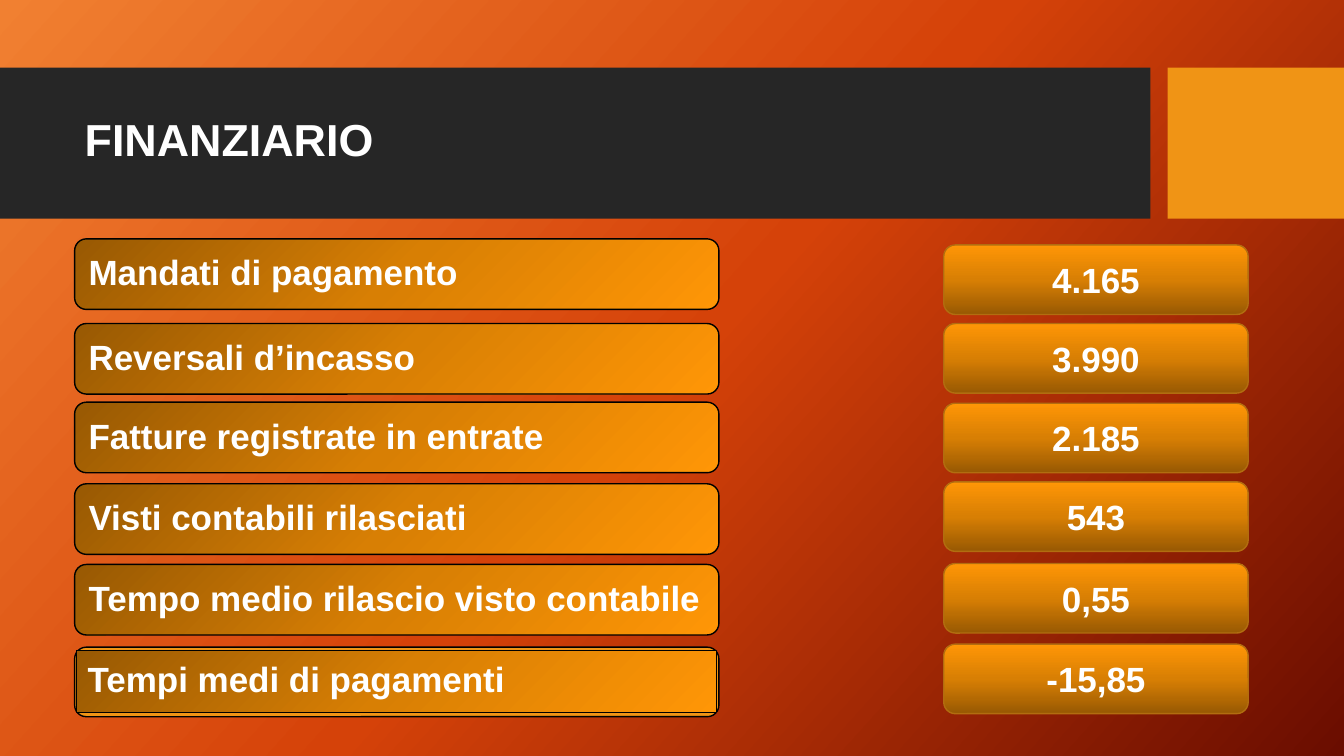
from lxml import etree
from pptx import Presentation
from pptx.dml.color import RGBColor
from pptx.enum.shapes import MSO_SHAPE
from pptx.enum.text import MSO_ANCHOR, PP_ALIGN
from pptx.oxml.ns import qn
from pptx.util import Inches, Pt

RECT, ROUND = MSO_SHAPE.RECTANGLE, MSO_SHAPE.ROUNDED_RECTANGLE
LEFT, CENTER = PP_ALIGN.LEFT, PP_ALIGN.CENTER
MIDDLE = MSO_ANCHOR.MIDDLE

WHITE = RGBColor(0xFF, 0xFF, 0xFF)
BLACK = RGBColor(0, 0, 0)
DARK = RGBColor(0x26, 0x26, 0x26)
ORANGE = RGBColor(0xF0, 0x94, 0x15)
BRONZE = RGBColor(0xB2, 0x6D, 0x10)
SUNSET = (RGBColor(0xF1, 0x80, 0x31), RGBColor(0xD5, 0x42, 0x09),
          RGBColor(0x6A, 0x0D, 0x00))
AMBER = (RGBColor(0x98, 0x59, 0x03), RGBColor(0xD8, 0x7F, 0x04),
         RGBColor(0xFF, 0x96, 0x06))

# label, label top, value, value top
ROWS = [
    ("Mandati di pagamento", 2.37, "4.165", 2.43),
    ("Reversali d’incasso", 3.21, "3.990", 3.21),
    ("Fatture registrate in entrate", 3.99, "2.185", 4),
    ("Visti contabili rilasciati", 4.8, "543", 4.78),
    ("Tempo medio rilascio visto contabile", 5.6, "0,55", 5.59),
    ("Tempi medi di pagamenti", 6.42, "-15,85", 6.39),
]


def blend(fill, host, colors, angle=None):
    """Three-stop gradient: linear at a clockwise angle, else from top left."""
    fill.gradient()
    grad = next(host.iter(qn("a:gradFill")))
    for child in list(grad):
        grad.remove(child)
    stops = etree.SubElement(grad, qn("a:gsLst"))
    for pos, color in zip((0, 50000, 100000), colors):
        stop = etree.SubElement(stops, qn("a:gs"), pos=str(pos))
        etree.SubElement(stop, qn("a:srgbClr"), val=str(color))
    if angle is None:
        way = etree.SubElement(grad, qn("a:path"), path="circle")
        etree.SubElement(way, qn("a:fillToRect"), r="100000", b="100000")
    else:
        etree.SubElement(grad, qn("a:lin"), ang=str(angle * 60000), scaled="0")


def write(shape, text, size=25, align=LEFT, spacing=0.9, inset=None):
    frame = shape.text_frame
    frame.word_wrap = True
    frame.vertical_anchor = MIDDLE
    if inset is not None:
        frame.margin_left = frame.margin_right = Inches(inset)
        frame.margin_top = frame.margin_bottom = Inches(inset)
    para = frame.paragraphs[0]
    para.text = text
    para.alignment = align
    para.line_spacing = spacing
    font = para.runs[0].font
    font.name, font.size, font.bold = "Arial", Pt(size), True
    font.color.rgb = WHITE


def block(shapes, kind, box, fill, line=None, width=1, angle=None):
    """Preset shape; fill is one colour or a tuple of gradient colours."""
    shape = shapes.add_shape(kind, *map(Inches, box))
    shape.shadow.inherit = False
    if fill is AMBER:
        blend(shape.fill, shape.element, fill, angle)
    else:
        shape.fill.solid()
        shape.fill.fore_color.rgb = fill
    if line is None:
        shape.line.fill.background()
    else:
        shape.line.color.rgb = line
        shape.line.width = Pt(width)
    return shape


def header(slide):
    title = slide.shapes.title
    for box, color in (((0, 0.67, 11.41, 1.5), DARK),
                       ((11.58, 0.67, 1.75, 1.5), ORANGE)):
        band = block(slide.shapes, RECT, box, color)
        title.element.addprevious(band.element)
    title.left, title.top = Inches(0.74), Inches(0.82)
    title.width, title.height = Inches(10.51), Inches(1.18)
    write(title, "FINANZIARIO", size=32)


def label(slide, text, top):
    shapes = slide.shapes.add_group_shape().shapes
    block(shapes, ROUND, (0.74, top, 6.39, 0.7), AMBER, BLACK)
    box = shapes.add_textbox(*map(Inches, (0.78, top + 0.04, 6.32, 0.63)))
    write(box, text, inset=0.1)


def framed(slide, text, top):
    """Label with a square panel inside a plain rounded bar."""
    shapes = slide.shapes.add_group_shape().shapes
    block(shapes, ROUND, (0.74, top, 6.39, 0.69), ORANGE, BLACK)
    panel = block(shapes, RECT, (0.76, top + 0.03, 6.35, 0.62),
                  AMBER, BLACK, width=0.75)
    write(panel, text, inset=0.11)


def value(slide, text, top):
    shape = block(slide.shapes, ROUND, (9.36, top, 3.02, 0.69),
                  AMBER, BRONZE, angle=270)
    write(shape, text, align=CENTER, spacing=1.0)


def main():
    prs = Presentation()
    prs.slide_width, prs.slide_height = Inches(13.33), Inches(7.5)
    slide = prs.slides.add_slide(prs.slide_layouts[5])
    blend(slide.background.fill, slide.element, SUNSET, 42)
    header(slide)
    for text, top, figure, level in ROWS:
        draw = framed if text == ROWS[-1][0] else label
        draw(slide, text, top)
        value(slide, figure, level)
    prs.save("out.pptx")


if __name__ == "__main__":
    main()
